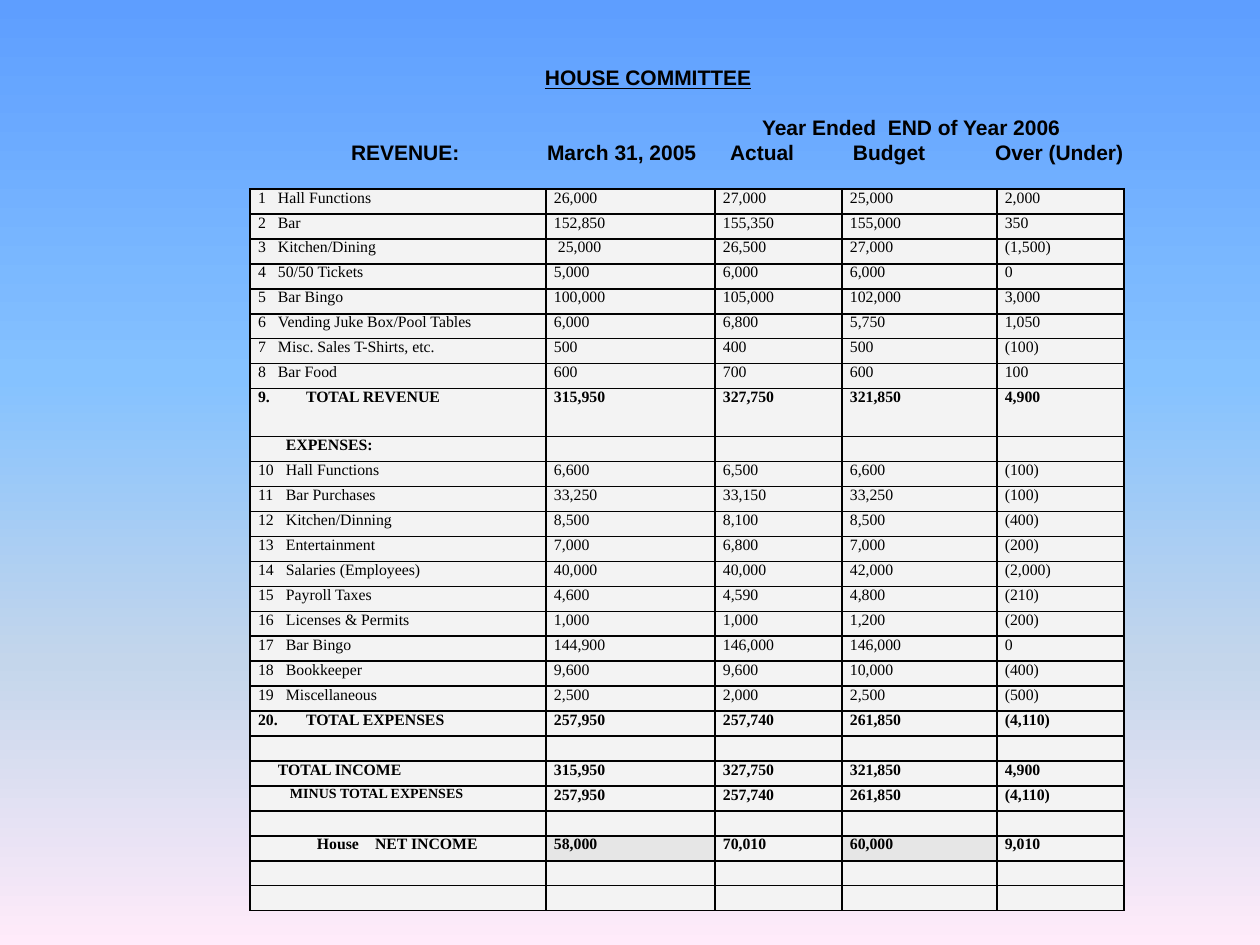
"""Build the House Committee revenue and expense slide."""
from copy import deepcopy
from dataclasses import dataclass

from lxml.etree import SubElement
from pptx import Presentation
from pptx.dml.color import RGBColor
from pptx.enum.text import MSO_ANCHOR, MSO_AUTO_SIZE, PP_ALIGN
from pptx.oxml.ns import qn
from pptx.util import Emu, Pt


@dataclass(frozen=True)
class Theme:
    ink: str = "000000"
    cell: str = "F3F3F3"
    accent_cell: str = "E6E6E6"
    sky: tuple = ((0, "5E9EFF"), (0.4, "85C2FF"), (0.7, "C4D6EB"), (1, "FFEBFA"))
    heading_font: str = "Arial"
    table_font: str = "Times New Roman"
    heading_size: int = 12
    table_size: int = 9
    small_size: int = 8
    border_width: int = 1


@dataclass(frozen=True)
class HeadingLine:
    text: str
    stops: tuple[int, ...]
    underline: bool = False
    space_after: int = 0


@dataclass(frozen=True)
class Row:
    label: str = ""
    amounts: tuple[str, ...] = ("",) * 4
    stops: tuple[int, ...] = ()
    bold: bool = False
    number: int = 0
    label_size: int = Theme.table_size
    height: int = 25
    accents: tuple[int, ...] = ()


THEME = Theme()
COLUMN_WIDTHS = (296, 169, 127, 155, 127)
NUMBER_INDENT = 48
CELL_MARGIN = 8

HEADING = (
    HeadingLine("HOUSE COMMITTEE", (513,), underline=True, space_after=14),
    HeadingLine("Year Ended  END of Year 2006", (730,)),
    HeadingLine("REVENUE:\tMarch 31, 2005\tActual\tBudget\tOver (Under)", (319, 515, 698, 821, 963)),
)
REVENUE = (
    ("Hall Functions", "26,000", "27,000", "25,000", "2,000"),
    ("Bar", "152,850", "155,350", "155,000", "350"),
    ("Kitchen/Dining", " 25,000", "26,500", "27,000", "(1,500)"),
    ("50/50 Tickets", "5,000", "6,000", "6,000", "0"),
    ("Bar Bingo", "100,000", "105,000", "102,000", "3,000"),
    ("Vending Juke Box/Pool Tables", "6,000", "6,800", "5,750", "1,050"),
    ("Misc. Sales T-Shirts, etc.", "500", "400", "500", "(100)"),
    ("Bar Food", "600", "700", "600", "100"),
)
EXPENSES = (
    ("Hall Functions", "6,600", "6,500", "6,600", "(100)"),
    ("Bar Purchases", "33,250", "33,150", "33,250", "(100)"),
    ("Kitchen/Dinning", "8,500", "8,100", "8,500", "(400)"),
    ("Entertainment", "7,000", "6,800", "7,000", "(200)"),
    ("Salaries (Employees)", "40,000", "40,000", "42,000", "(2,000)"),
    ("Payroll Taxes", "4,600", "4,590", "4,800", "(210)"),
    ("Licenses & Permits", "1,000", "1,000", "1,200", "(200)"),
    ("Bar Bingo", "144,900", "146,000", "146,000", "0"),
    ("Bookkeeper", "9,600", "9,600", "10,000", "(400)"),
    ("Miscellaneous", "2,500", "2,000", "2,500", "(500)"),
)
TOTAL_REVENUE = ("315,950", "327,750", "321,850", "4,900")
TOTAL_EXPENSES = ("257,950", "257,740", "261,850", "(4,110)")
NET_INCOME = ("58,000", "70,010", "60,000", "9,010")


def px(length: int) -> Emu:
    """Turn pixels at 126 to the inch into EMU."""
    return Emu(round(length * 914400 / 126))


def numbered_rows(entries: tuple, first: int, stop: int) -> list[Row]:
    """Number the entries from first, with names aligned at stop."""
    return [Row(f"{number}\t{name}", tuple(amounts), (stop,))
            for number, (name, *amounts) in enumerate(entries, first)]


def table_rows() -> list[Row]:
    """List the rows of the statement from top to bottom."""
    return [
        *numbered_rows(REVENUE, 1, 20),
        Row("TOTAL REVENUE", TOTAL_REVENUE, bold=True, number=9, height=48),
        Row("\tEXPENSES:", stops=(28,), bold=True),
        *numbered_rows(EXPENSES, 10, 28),
        Row("TOTAL EXPENSES", TOTAL_EXPENSES, bold=True, number=20),
        Row(),
        Row("\tTOTAL INCOME", TOTAL_REVENUE, (20,), bold=True),
        Row("\tMINUS TOTAL EXPENSES", TOTAL_EXPENSES, (32,), bold=True, label_size=THEME.small_size),
        Row(),
        Row("\tHouse\tNET INCOME", NET_INCOME, (59, 117), bold=True, accents=(1, 3)),
        Row(),
        Row(),
    ]


def add_run(paragraph, text: str, font: str, size: int, bold: bool, underline: bool = False) -> None:
    """Append one formatted run."""
    run = paragraph.add_run()
    run.text = text
    run.font.name = font
    run.font.size = Pt(size)
    run.font.bold = bold
    run.font.underline = underline
    run.font.color.rgb = RGBColor.from_string(THEME.ink)


def set_tab_stops(paragraph, stops: tuple[int, ...]) -> None:
    """Give the paragraph left tab stops."""
    tab_list = SubElement(paragraph._p.get_or_add_pPr(), qn("a:tabLst"))
    for stop in stops:
        SubElement(tab_list, qn("a:tab"), pos=str(px(stop)), algn="l")


def set_number(paragraph, number: int) -> None:
    """Number the paragraph automatically with a hanging indent."""
    properties = paragraph._p.get_or_add_pPr()
    properties.set("marL", str(px(NUMBER_INDENT)))
    properties.set("indent", str(-px(NUMBER_INDENT)))
    SubElement(properties, qn("a:buAutoNum"), type="arabicPeriod", startAt=str(number))


def set_borders(cell) -> None:
    """Draw a line on each side of the cell."""
    properties = cell._tc.get_or_add_tcPr()
    for index, side in enumerate(("lnL", "lnR", "lnT", "lnB")):
        line = SubElement(properties, qn(f"a:{side}"), w=str(Pt(THEME.border_width)))
        SubElement(SubElement(line, qn("a:solidFill")), qn("a:srgbClr"), val=THEME.ink)
        properties.insert(index, line)


def fill_cell(cell, text: str, size: int, bold: bool, color: str) -> None:
    """Format a table cell and write its text."""
    cell.fill.solid()
    cell.fill.fore_color.rgb = RGBColor.from_string(color)
    cell.margin_left = cell.margin_right = px(CELL_MARGIN)
    cell.margin_top = cell.margin_bottom = 0
    set_borders(cell)
    paragraph = cell.text_frame.paragraphs[0]
    if text:
        add_run(paragraph, text, THEME.table_font, size, bold)
    else:
        paragraph._p.get_or_add_endParaRPr().set("sz", str(size * 100))


def draw_background(slide) -> None:
    """Fill the background with a vertical gradient."""
    fill = slide.background.fill
    fill.gradient()
    fill.gradient_angle = 270
    stop_list = slide.element.find(".//" + qn("a:gsLst"))
    while len(stop_list) < len(THEME.sky):
        stop_list.append(deepcopy(stop_list[0]))
    for stop, (position, color) in zip(fill.gradient_stops, THEME.sky):
        stop.position = position
        stop.color.rgb = RGBColor.from_string(color)


def draw_table(slide, rows: list[Row]) -> None:
    """Draw the statement table."""
    frame = slide.shapes.add_table(len(rows), len(COLUMN_WIDTHS), px(250), px(189),
                                   px(sum(COLUMN_WIDTHS)), px(sum(row.height for row in rows)))
    table = frame.table
    table.first_row = table.horz_banding = False
    for column, width in zip(table.columns, COLUMN_WIDTHS):
        column.width = px(width)
    for row_index, row in enumerate(rows):
        table.rows[row_index].height = px(row.height)
        for column_index, text in enumerate((row.label, *row.amounts)):
            size = THEME.table_size if column_index else row.label_size
            color = THEME.accent_cell if column_index in row.accents else THEME.cell
            fill_cell(table.cell(row_index, column_index), text, size, row.bold, color)
        label = table.cell(row_index, 0).text_frame.paragraphs[0]
        if row.number:
            set_number(label, row.number)
        if row.stops:
            set_tab_stops(label, row.stops)


def draw_heading(slide) -> None:
    """Place the title with its column headings."""
    title = slide.shapes.title
    title.left, title.top, title.width, title.height = px(32), px(64), px(1260), px(102)
    text_frame = title.text_frame
    text_frame.word_wrap = True
    text_frame.auto_size = MSO_AUTO_SIZE.SHAPE_TO_FIT_TEXT
    text_frame.vertical_anchor = MSO_ANCHOR.MIDDLE
    text_frame.margin_left = text_frame.margin_right = 0
    text_frame.margin_top = text_frame.margin_bottom = 0
    for index, line in enumerate(HEADING):
        paragraph = text_frame.add_paragraph() if index else text_frame.paragraphs[0]
        paragraph.alignment = PP_ALIGN.LEFT
        paragraph.space_after = Pt(line.space_after)
        set_tab_stops(paragraph, line.stops)
        add_run(paragraph, "\t", THEME.heading_font, THEME.heading_size, True)
        add_run(paragraph, line.text, THEME.heading_font, THEME.heading_size, True, line.underline)


def main() -> None:
    """Build and save the presentation."""
    presentation = Presentation()
    presentation.slide_width, presentation.slide_height = px(1260), px(945)
    slide = presentation.slides.add_slide(presentation.slide_layouts[5])
    draw_background(slide)
    draw_table(slide, table_rows())
    draw_heading(slide)
    presentation.save("out.pptx")


if __name__ == "__main__":
    main()
